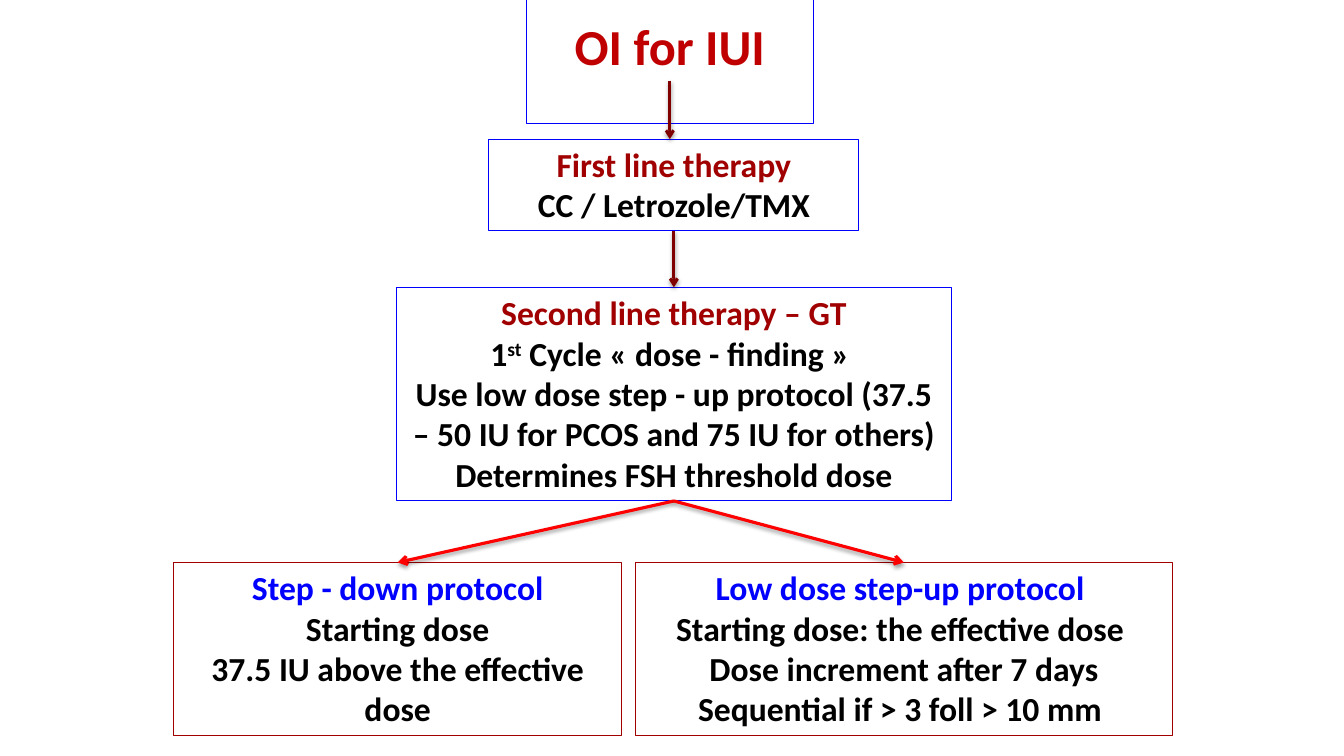
from lxml import etree
from dataclasses import dataclass
from pptx import Presentation
from pptx import util as u
from pptx.dml.color import RGBColor
from pptx.enum import shapes, text
from pptx.oxml import ns

W, H = u.Inches(13.33), u.Inches(7.5)
TOP, BOTTOM = 0, 2  # connection sites of a rectangle


@dataclass(frozen=True)
class Theme:
    font: str = "Calibri"
    title_size: float = 36
    body_size: float = 24
    thin: float = 0.75
    title: str = "C00000"
    heading: str = "A00000"
    protocol: str = "0000FF"
    body: str = "000000"
    frame: str = "0000FF"
    option_frame: str = "A00000"
    step: str = "800000"
    branch: str = "FF0000"


T = Theme()


def rgb(value):
    return RGBColor.from_string(value)


def place(sp, cx, top, width, height):
    """Position by centre, top, width and height in percent of the slide."""
    sp.left, sp.top = int(W * (cx - width / 2) / 100), int(H * top / 100)
    sp.width, sp.height = int(W * width / 100), int(H * height / 100)


def frame(sp, color, anchor):
    sp.fill.background()
    sp.line.color.rgb = rgb(color)
    sp.line.width = u.Pt(T.thin)
    tf = sp.text_frame
    tf.word_wrap = True
    tf.auto_size = text.MSO_AUTO_SIZE.SHAPE_TO_FIT_TEXT
    tf.vertical_anchor = anchor
    return tf


def add_run(p, content, size, color, raised=False):
    r = p.add_run()
    r.text = content
    r.font.name, r.font.size, r.font.bold = T.font, u.Pt(size), True
    r.font.color.rgb = rgb(color)
    if raised:
        r.font._element.set("baseline", "30000")


def write(tf, paragraphs, heading_color, size):
    """Each paragraph is a list of runs; "^" marks superscript, "\\n" a break."""
    for i, runs in enumerate(paragraphs):
        p = tf.paragraphs[0] if i == 0 else tf.add_paragraph()
        p.alignment = text.PP_ALIGN.CENTER
        for content in runs:
            if content == "\n":
                p.add_line_break()
            else:
                add_run(p, content.lstrip("^"), size,
                        T.body if i else heading_color, content.startswith("^"))


def add_title(s, content, *spot):
    sp = s.shapes.title
    place(sp, *spot)
    tf = frame(sp, T.frame, text.MSO_ANCHOR.MIDDLE)
    write(tf, [[content]], T.title, T.title_size)
    return sp


def add_box(s, spot, border, heading_color, paragraphs):
    sp = s.shapes.add_shape(shapes.MSO_SHAPE.RECTANGLE, 0, 0, 0, 0)
    place(sp, *spot)
    sp.shadow.inherit = False
    tf = frame(sp, border, text.MSO_ANCHOR.TOP)
    write(tf, paragraphs, heading_color, T.body_size)
    return sp


def add_arrow(s, start, end, color, width, vertical=False):
    """Arrow from bottom centre to top centre, or straight down if vertical."""
    x = start.left + start.width // 2
    c = s.shapes.add_connector(shapes.MSO_CONNECTOR.STRAIGHT,
                               x, start.top + start.height, x, end.top)
    c.begin_connect(start, BOTTOM)
    if not vertical:
        c.end_connect(end, TOP)
    c.line.color.rgb = rgb(color)
    c.line.width = u.Pt(width)
    # Arrowhead and soft shadow
    etree.SubElement(c.line._get_or_add_ln(), ns.qn("a:tailEnd"), type="arrow")
    effects = etree.SubElement(c._element.spPr, ns.qn("a:effectLst"))
    shadow = etree.SubElement(
        effects, ns.qn("a:outerShdw"), blurRad=str(u.Pt(3.1)),
        dist=str(u.Pt(1.6)), dir="5400000", rotWithShape="0")
    tint = etree.SubElement(shadow, ns.qn("a:srgbClr"), val="000000")
    etree.SubElement(tint, ns.qn("a:alpha"), val="38000")


def main():
    prs = Presentation()
    prs.slide_width, prs.slide_height = W, H
    s = prs.slides.add_slide(prs.slide_layouts[5])

    # Treatment lines, top to bottom
    axis = 50.14
    title = add_title(s, "OI for IUI", 49.84, 1.2, 21.38, 9.47)
    first = add_box(s, (axis, 18.4, 27.53, 12.13), T.frame, T.heading, [
        ["First line therapy"],
        ["CC / Letrozole/TMX"]])
    second = add_box(s, (axis, 38, 41.34, 28.27), T.frame, T.heading, [
        ["Second line therapy – GT"],
        ["1", "^st", " Cycle « dose - finding » "],
        ["Use low dose step - up protocol (37.5 – 50 IU for PCOS and 75 IU for others)"],
        ["Determines FSH threshold dose"]])

    # Protocol options, side by side
    row, height = 74.4, 22.93
    step_down = add_box(s, (29.59, row, 33.38, height), T.option_frame, T.protocol, [
        ["Step - down protocol"],
        ["Starting dose"],
        ["37.5 IU above the effective dose"]])
    step_up = add_box(s, (67.25, row, 39.98, height), T.option_frame, T.protocol, [
        ["Low dose step-up protocol "],
        ["Starting dose: the effective dose "],
        ["Dose increment after 7 days", "\n", "Sequential if > 3 foll > 10 mm "]])

    # Arrows
    add_arrow(s, title, first, T.step, 2, vertical=True)
    add_arrow(s, first, second, T.step, 2)
    for option in (step_down, step_up):
        add_arrow(s, second, option, T.branch, 2.25)

    prs.save("out.pptx")


if __name__ == "__main__":
    main()
